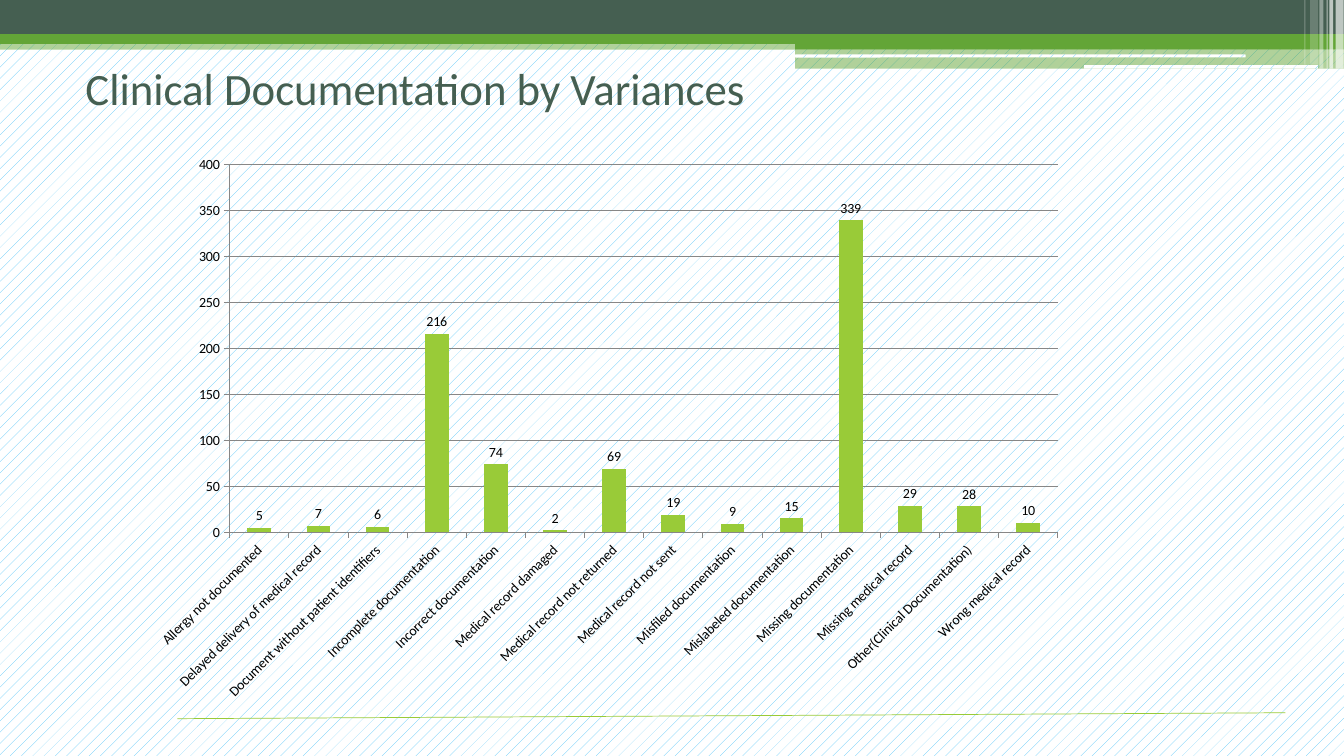
"""Build the Clinical Documentation by Variances slide with its column chart."""
from lxml.etree import SubElement
from pptx import Presentation
from pptx.chart.data import CategoryChartData
from pptx.dml.color import RGBColor
from pptx.enum.chart import XL_CHART_TYPE, XL_LABEL_POSITION, XL_TICK_MARK
from pptx.enum.dml import MSO_PATTERN
from pptx.enum.shapes import MSO_CONNECTOR, MSO_SHAPE
from pptx.enum.text import MSO_ANCHOR, PP_ALIGN
from pptx.oxml.ns import qn
from pptx.util import Cm, Pt


def paint(fill, color, alpha=100):
    fill.solid()
    fill.fore_color.rgb = RGBColor.from_string(color)
    if alpha < 100:
        clr = fill._xPr.find(qn("a:solidFill"))[0]
        SubElement(clr, qn("a:alpha"), val=str(alpha * 1000))


def dot(fill):
    fill.patterned()
    fill.pattern = MSO_PATTERN.PERCENT_10
    fill.fore_color.rgb = RGBColor.from_string("51C3F9")
    fill.back_color.rgb = RGBColor.from_string("FFFFFF")


DARK, GREEN, LIME, WHITE, GREY = "455F51", "63A537", "99CB38", "FFFFFF", "878787"

prs = Presentation()
prs.slide_width, prs.slide_height = Cm(33.87), Cm(19.05)
s = prs.slides.add_slide(prs.slide_layouts[5])
dot(s.background.fill)

bands = [
    (0, 1.02, 33.87, 0.23, GREEN, 50),
    (0, 0, 33.87, 0.86, DARK, 100),
    (0, 0.86, 33.87, 0.25, GREEN, 100),
    (20.04, 0.99, 13.83, 0.25, GREEN, 100),
    (20.04, 1.22, 13.83, 0.51, GREEN, 50),
    (20.04, 1.37, 11.35, 0.08, None, 100),
    (27.31, 1.63, 5.92, 0.1, None, 100),
    (33.66, 0, 0.2, 1.73, WHITE, 65),
    (33.5, 0, 0.1, 1.73, WHITE, 65),
    (33.43, 0, 0.03, 1.73, WHITE, 60),
    (33.25, 0, 0.1, 1.73, WHITE, 40),
    (33.02, 0, 0.2, 1.63, WHITE, 20),
    (32.87, 0, 0.03, 1.63, WHITE, 30),
]
for x, y, w, h, color, alpha in bands:
    kind = MSO_SHAPE.RECTANGLE if color else MSO_SHAPE.ROUNDED_RECTANGLE
    sp = s.shapes.add_shape(kind, Cm(x), Cm(y), Cm(w), Cm(h))
    sp.shadow.inherit = False
    sp.line.fill.background()
    if color:
        paint(sp.fill, color, alpha)
    else:
        dot(sp.fill)

rule = s.shapes.add_connector(MSO_CONNECTOR.STRAIGHT, Cm(4.47), Cm(18.11), Cm(32.39), Cm(17.96))
paint(rule.line.fill, LIME)
rule.line.width = Pt(0.5)
SubElement(rule._element.spPr, qn("a:effectLst"))

title = s.shapes.title
title.left, title.top, title.width, title.height = Cm(1.9), Cm(1.3), Cm(28.88), Cm(3.2)
tf = title.text_frame
tf.word_wrap = True
tf.vertical_anchor = MSO_ANCHOR.TOP
tf.margin_top = Cm(0.23)
p = tf.paragraphs[0]
p.alignment = PP_ALIGN.LEFT
r = p.add_run()
r.text = "Clinical Documentation by Variances"
r.font.size = Pt(32)
r.font.name = "Calibri"
r.font.color.rgb = RGBColor.from_string(DARK)

variances = {
    "Allergy not documented": 5,
    "Delayed delivery of medical record": 7,
    "Document without patient identifiers": 6,
    "Incomplete documentation": 216,
    "Incorrect documentation": 74,
    "Medical record damaged": 2,
    "Medical record not returned": 69,
    "Medical record not sent": 19,
    "Misfiled documentation": 9,
    "Mislabeled documentation": 15,
    "Missing documentation": 339,
    "Missing medical record": 29,
    "Other(Clinical Documentation)": 28,
    "Wrong medical record": 10,
}
data = CategoryChartData()
data.categories = list(variances)
data.add_series("Series 1", list(variances.values()))
chart = s.shapes.add_chart(
    XL_CHART_TYPE.COLUMN_CLUSTERED, Cm(3.53), Cm(3.66), Cm(23.6), Cm(14.25), data
).chart
chart.has_title = False
chart.has_legend = False
chart.font.name = "Calibri"
chart.font.size = Pt(10)
chart.font.color.rgb = RGBColor.from_string("000000")

plot = chart.plots[0]
plot.vary_by_categories = False
plot.gap_width = 150
ser = plot.series[0]
ser.invert_if_negative = False
paint(ser.format.fill, LIME)
labels = ser.data_labels
labels.show_value = True
labels.position = XL_LABEL_POSITION.OUTSIDE_END

cat, val = chart.category_axis, chart.value_axis
val.minimum_scale, val.maximum_scale, val.major_unit = 0, 400, 50
val.has_major_gridlines = True
for axis in (cat, val):
    axis.major_tick_mark = XL_TICK_MARK.OUTSIDE
    axis.minor_tick_mark = XL_TICK_MARK.NONE
    axis.tick_labels.font.size = Pt(10)
for fmt in (cat.format, val.format, val.major_gridlines.format):
    paint(fmt.line.fill, GREY)
    fmt.line.width = Pt(0.75)
cat._element.find(qn("c:txPr")).find(qn("a:bodyPr")).set("rot", "-2700000")

prs.save("out.pptx")
